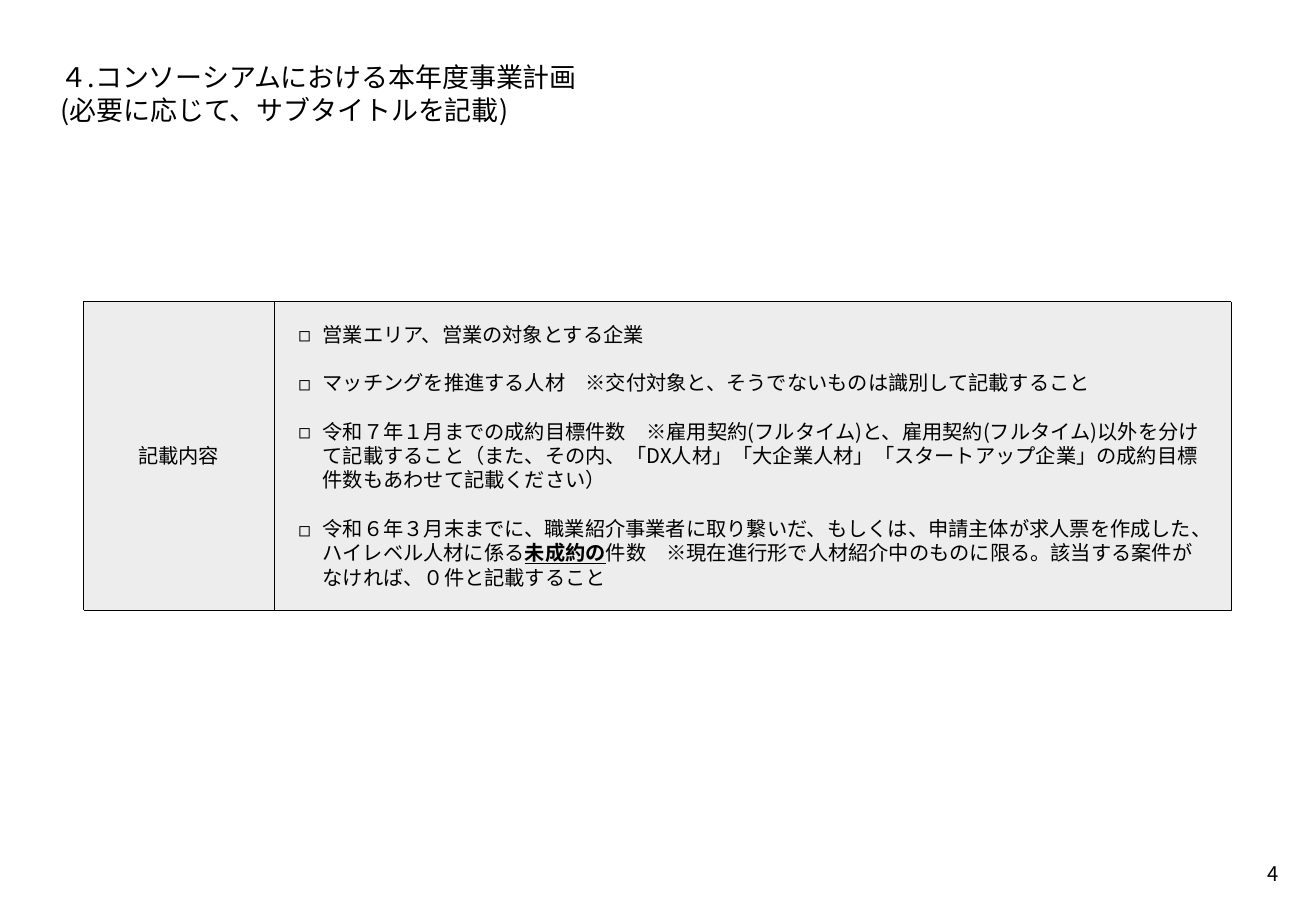
import pptx
import pptx.dml.color
import pptx.enum.dml
import pptx.enum.shapes
import pptx.enum.text
import pptx.oxml.ns
import pptx.util
import lxml.etree

Pt = pptx.util.Pt
ALIGN = pptx.enum.text.PP_ALIGN
ANCHOR = pptx.enum.text.MSO_ANCHOR
FONT = "Noto Sans CJK JP"
COLOURS = {"ink": "000000", "panel": "EDEDED"}
LINE_RATIO = 1.2
INDENT = 14.4

TITLE = "４.コンソーシアムにおける本年度事業計画\n(必要に応じて、サブタイトルを記載)"
LABEL = "記載内容"
ITEMS = [
    ["営業エリア、営業の対象とする企業"],
    ["マッチングを推進する人材　※交付対象と、そうでないものは識別して記載すること"],
    ["令和７年１月までの成約目標件数　※雇用契約(フルタイム)と、雇用契約(フルタイム)以外を"
     "分けて記載すること（また、その内、「DX人材」「大企業人材」「スタートアップ企業」の"
     "成約目標件数もあわせて記載ください）"],
    ["令和６年３月末までに、職業紹介事業者に取り繋いだ、もしくは、申請主体が求人票を作成した、"
     "ハイレベル人材に係る",
     ("未成約の", True),
     "件数　※現在進行形で人材紹介中のものに限る。該当する案件がなければ、０件と記載すること"],
]


def colour(name):
    return pptx.dml.color.RGBColor.from_string(COLOURS[name])


def add_element(parent, tag, **attributes):
    return lxml.etree.SubElement(parent, pptx.oxml.ns.qn(tag), **attributes)


def add_span(para, text, size=12, strong=False):
    for index, line in enumerate(text.split("\n")):
        if index:
            para.add_line_break()
        span = para.add_run()
        span.text = line
        span.font.name = FONT
        span.font.size = Pt(size)
        span.font.bold = strong
        span.font.underline = strong
        span.font.color.rgb = colour("ink")
        add_element(span.font._element, "a:ea", typeface=FONT)


def write_para(para, spans, size=12, align=ALIGN.LEFT, bullet=None, before=0):
    para.alignment = align
    para.line_spacing = Pt(size * LINE_RATIO)
    para.space_before = Pt(before)
    if bullet:
        properties = para._p.get_or_add_pPr()
        properties.set("marL", str(Pt(INDENT)))
        properties.set("indent", str(-Pt(INDENT)))
        add_element(properties, "a:buFont", typeface=FONT)
        add_element(properties, "a:buChar", char=bullet)
    for span in spans:
        text, strong = (span, False) if isinstance(span, str) else span
        add_span(para, text, size=size, strong=strong)


def set_frame(shape, inset, anchor=ANCHOR.TOP, wrap=True):
    frame = shape.text_frame
    frame.word_wrap = wrap
    frame.vertical_anchor = anchor
    frame.margin_left = frame.margin_right = Pt(inset[0])
    frame.margin_top = frame.margin_bottom = Pt(inset[1])
    return frame


def add_text(page, box, text, inset, wrap=True, **style):
    shape = page.shapes.add_textbox(*map(Pt, box))
    frame = set_frame(shape, (inset, inset), wrap=wrap)
    write_para(frame.paragraphs[0], [text], **style)


def add_panel(group, box, inset):
    panel = group.shapes.add_shape(pptx.enum.shapes.MSO_SHAPE.RECTANGLE, *map(Pt, box))
    panel.shadow.inherit = False
    panel.fill.solid()
    panel.fill.fore_color.rgb = colour("panel")
    panel.line.color.rgb = colour("ink")
    panel.line.width = Pt(0.25)
    panel.line.dash_style = pptx.enum.dml.MSO_LINE.ROUND_DOT
    return set_frame(panel, inset, anchor=ANCHOR.MIDDLE)


def add_contents(page, box, label_width=113):
    left, top, width, height = box
    group = page.shapes.add_group_shape()
    body_box = (left + label_width, top, width - label_width, height)
    body = add_panel(group, body_box, (14.4, 14.4))
    for index, spans in enumerate(ITEMS):
        para = body.add_paragraph() if index else body.paragraphs[0]
        write_para(para, spans, bullet="◻", before=14.4 if index else 0)
    label = add_panel(group, (left, top, label_width, height), (7.2, 3.6))
    write_para(label.paragraphs[0], [LABEL], align=ALIGN.CENTER)


def main():
    deck = pptx.Presentation()
    deck.slide_width, deck.slide_height = Pt(780), Pt(540)
    page = deck.slides.add_slide(deck.slide_layouts[6])
    add_text(page, (21.6, 21.6, 737, 57), TITLE, 14.4, size=16)
    add_text(page, (737, 503.5, 28, 28), "4", 7.2, wrap=False, align=ALIGN.RIGHT)
    add_contents(page, (49.5, 178.5, 680, 183))
    deck.save("out.pptx")


if __name__ == "__main__":
    main()
